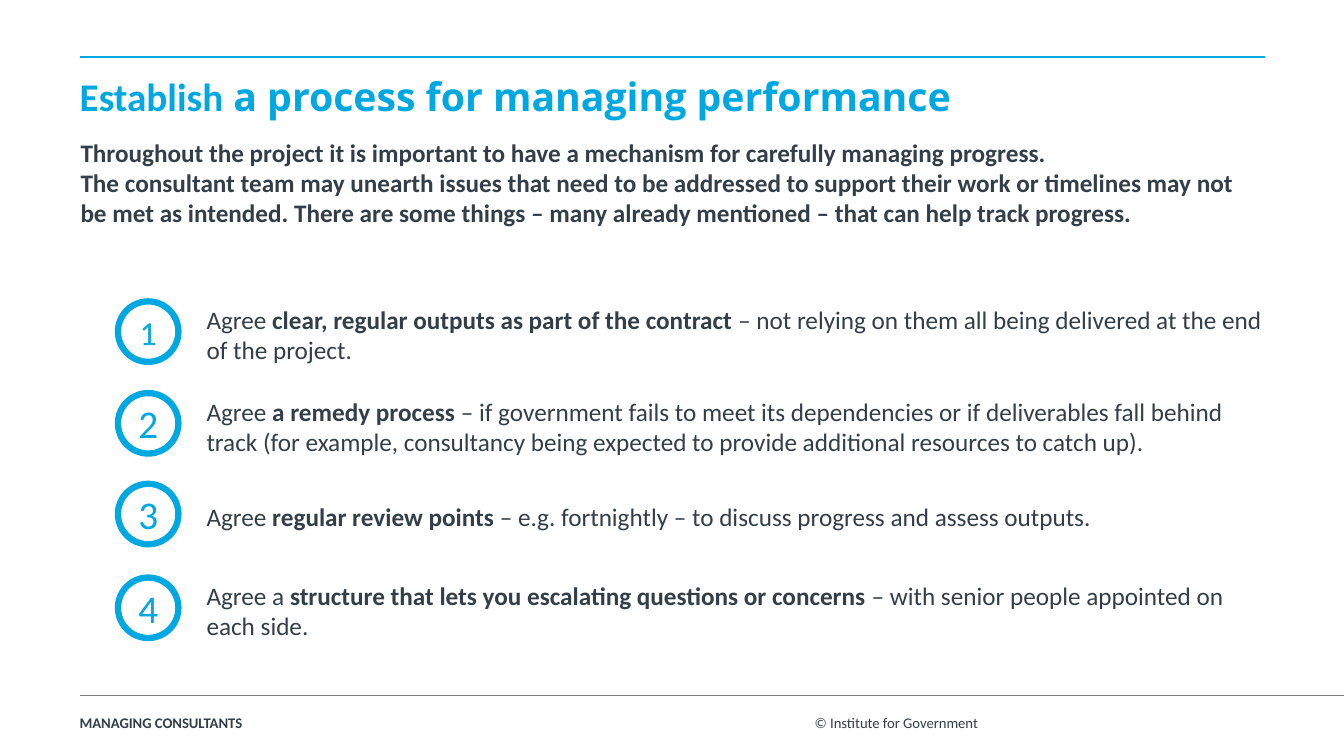
from dataclasses import dataclass

from lxml import etree
from pptx import Presentation
from pptx.dml.color import RGBColor
from pptx.enum.shapes import MSO_CONNECTOR, MSO_SHAPE
from pptx.enum.text import MSO_ANCHOR, PP_ALIGN
from pptx.oxml.ns import qn
from pptx.slide import Slide
from pptx.text.text import TextFrame, _Paragraph
from pptx.util import Inches, Pt

STRAIGHT = MSO_CONNECTOR.STRAIGHT
ELLIPSE = MSO_SHAPE.OVAL
MIDDLE = MSO_ANCHOR.MIDDLE
CENTER = PP_ALIGN.CENTER

COLOURS = {"blue": "00A8E1", "text": "333F48", "rule": "7F7F7F", "white": "FFFFFF"}
BODY_FONT = "Calibri"
TITLE_FONT = "Open Sans"
LEFT_MARGIN = 0.79
CIRCLE_LEFT, CIRCLE_SIZE = 1.17, 0.6
STEP_LEFT = 1.95


@dataclass(frozen=True)
class Span:
    text: str
    size: float = 18
    bold: bool = False
    colour: str = "text"
    font: str = BODY_FONT


@dataclass(frozen=True)
class Step:
    circle_top: float
    text_top: float
    width: float
    height: float
    opening: str
    emphasis: str
    rest: str
    number_size: float = 28


STEPS = [
    Step(2.99, 2.97, 10.68, 0.71, "Agree ",
         "clear, regular outputs as part of the contract ",
         "– not relying on them all being delivered at the end of the project.", 24),
    Step(3.9, 3.88, 10.58, 0.71, "Agree ", "a remedy process ",
         "– if government fails to meet its dependencies or if deliverables fall behind "
         "track (for example, consultancy being expected to provide additional resources "
         "to catch up)."),
    Step(4.8, 4.92, 10.68, 0.4, "Agree ", "regular review points ",
         "– e.g. fortnightly – to discuss progress and assess outputs."),
    Step(5.73, 5.71, 10.68, 0.71, "Agree a ",
         "structure that lets you escalating questions or concerns ",
         "– with senior people appointed on each side."),
]

INTRODUCTION = [
    "Throughout the project it is important to have a mechanism for carefully "
    "managing progress.",
    "The consultant team may unearth issues that need to be addressed to support their "
    "work or timelines may not be met as intended. There are some things – many already "
    "mentioned – that can help track progress.",
]


def colour(name: str) -> RGBColor:
    return RGBColor.from_string(COLOURS[name])


def remove_insets(frame: TextFrame) -> None:
    frame.margin_left = frame.margin_top = frame.margin_right = frame.margin_bottom = 0


def write_spans(para: _Paragraph, spans: list[Span]) -> None:
    for span in spans:
        run = para.add_run()
        run.text = span.text
        run.font.name = span.font
        run.font.size = Pt(span.size)
        run.font.bold = span.bold
        run.font.color.rgb = colour(span.colour)


def add_text(page: Slide, left: float, top: float, width: float, height: float,
             paragraphs: list[list[Span]], inset: bool = True) -> TextFrame:
    box = page.shapes.add_textbox(Inches(left), Inches(top), Inches(width), Inches(height))
    frame = box.text_frame
    frame.word_wrap = True
    if not inset:
        remove_insets(frame)
    for index, spans in enumerate(paragraphs):
        para = frame.add_paragraph() if index else frame.paragraphs[0]
        write_spans(para, spans)
    return frame


def add_rule(page: Slide, right: float, top: float, name: str, weight: float) -> None:
    """Draw a horizontal line from the left margin."""
    rule = page.shapes.add_connector(
        STRAIGHT, Inches(LEFT_MARGIN), Inches(top), Inches(right), Inches(top))
    rule.line.color.rgb = colour(name)
    rule.line.width = Pt(weight)
    etree.SubElement(rule._element.spPr, qn("a:effectLst"))


def add_step(page: Slide, number: int, step: Step) -> None:
    circle = page.shapes.add_shape(
        ELLIPSE, Inches(CIRCLE_LEFT), Inches(step.circle_top),
        Inches(CIRCLE_SIZE), Inches(CIRCLE_SIZE))
    circle.shadow.inherit = False
    circle.fill.solid()
    circle.fill.fore_color.rgb = colour("white")
    circle.line.color.rgb = colour("blue")
    circle.line.width = Pt(4.5)
    frame = circle.text_frame
    remove_insets(frame)
    frame.vertical_anchor = MIDDLE
    frame.paragraphs[0].alignment = CENTER
    write_spans(frame.paragraphs[0], [Span(str(number), step.number_size, colour="blue")])
    add_text(page, STEP_LEFT, step.text_top, step.width, step.height,
             [[Span(step.opening), Span(step.emphasis, bold=True), Span(step.rest)]])


def main() -> None:
    deck = Presentation()
    deck.slide_width, deck.slide_height = Inches(13.33), Inches(7.5)
    page = deck.slides.add_slide(deck.slide_layouts[6])

    add_rule(page, 12.55, 0.57, "blue", 1.5)
    add_rule(page, 13.33, 6.9, "rule", 0.75)
    title = add_text(page, LEFT_MARGIN, 0.63, 10.65, 0.98, [[
        Span("Establish", 28, True, "blue"),
        Span(" a process for managing performance", 28, True, "blue", TITLE_FONT),
    ]], inset=False)
    title.paragraphs[0].line_spacing = Pt(40)
    add_text(page, 0.7, 1.31, 11.92, 1.01,
             [[Span(text, bold=True)] for text in INTRODUCTION])
    for number, step in enumerate(STEPS, start=1):
        add_step(page, number, step)
    add_text(page, LEFT_MARGIN, 7.08, 4.83, 0.27,
             [[Span("MANAGING CONSULTANTS", 10.5, True)]], inset=False)
    add_text(page, 8.08, 7.08, 2.74, 0.27,
             [[Span("© Institute for Government", 10.5)]], inset=False)
    deck.save("out.pptx")


if __name__ == "__main__":
    main()
